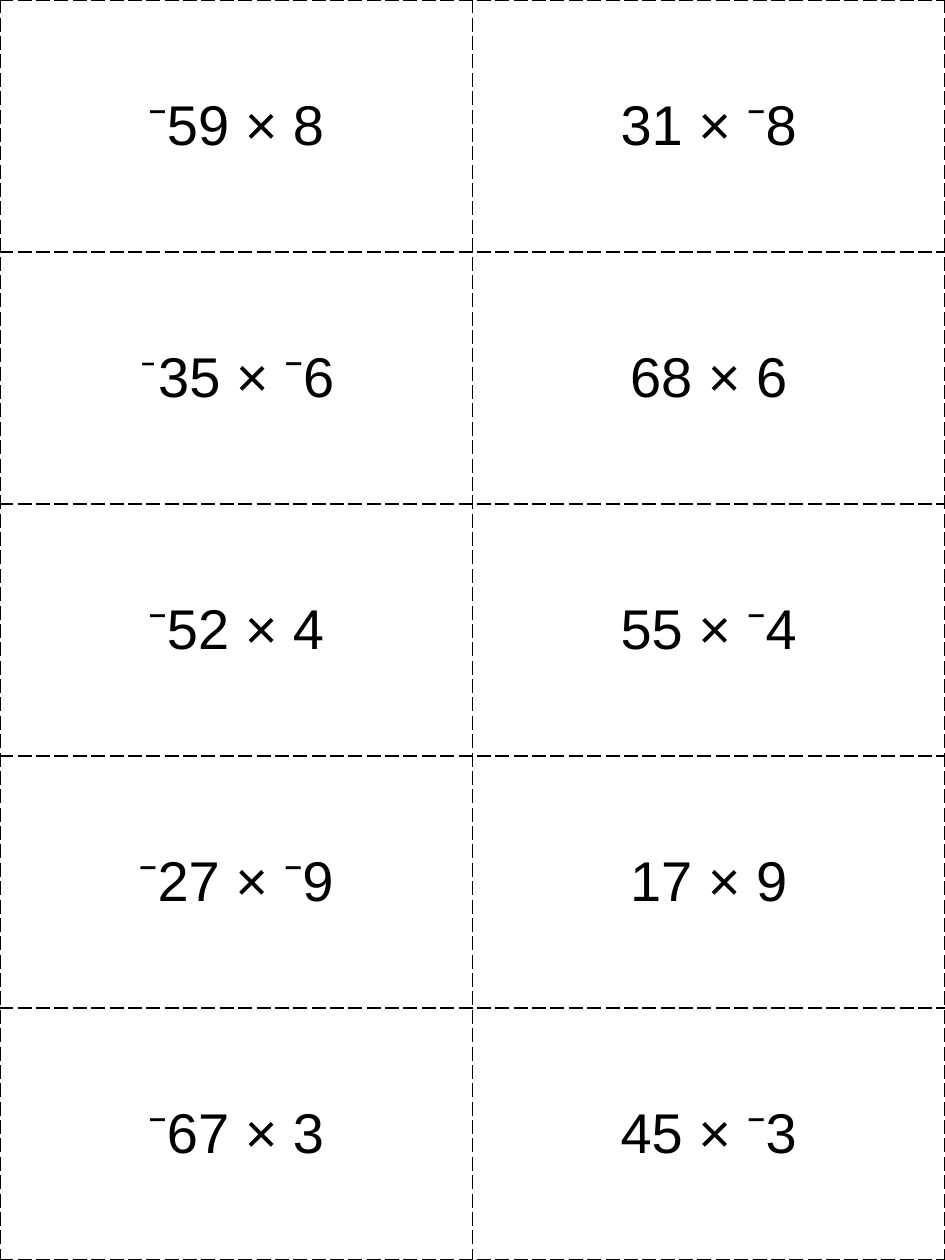
from lxml import etree
from pptx import Presentation
from pptx import util as u
from pptx.dml.color import RGBColor
from pptx.enum import text
from pptx.oxml.ns import qn

COLORS = {"ink": "000000"}
CARDS = [
    ["⁻59 × 8", "31 × ⁻8"],
    ["⁻35 × ⁻6", "68 × 6"],
    ["⁻52 × 4", "55 × ⁻4"],
    ["⁻27 × ⁻9", "17 × 9"],
    ["⁻67 × 3", "45 × ⁻3"],
]
CALIBRI_SIGN_CARD = (1, 0)  # this card's leading sign is in Calibri


def add_span(para, content, font):
    span = para.add_run()
    span.text = content
    span.font.name = font
    span.font.size = u.Pt(32)
    span.font.bold = False
    span.font.color.rgb = RGBColor.from_string(COLORS["ink"])


def add_dashed_borders(cell):
    properties = cell._tc.get_or_add_tcPr()
    for side in ("lnL", "lnR", "lnT", "lnB"):
        line = etree.SubElement(properties, qn(f"a:{side}"), w=str(u.Pt(1)))
        fill = etree.SubElement(line, qn("a:solidFill"))
        etree.SubElement(fill, qn("a:srgbClr"), val=COLORS["ink"])
        etree.SubElement(line, qn("a:prstDash"), val="lgDash")


# Page
deck = Presentation()
deck.slide_width = u.Cm(19.05)
deck.slide_height = u.Cm(25.4)
page = deck.slides.add_slide(deck.slide_layouts[6])

# Card grid filling the page
grid = page.shapes.add_table(
    len(CARDS), len(CARDS[0]), 0, 0, deck.slide_width, deck.slide_height
).table
grid.first_row = False
grid.horz_banding = False

# Cards
for row, questions in enumerate(CARDS):
    for column, question in enumerate(questions):
        cell = grid.cell(row, column)
        cell.vertical_anchor = text.MSO_ANCHOR.MIDDLE
        add_dashed_borders(cell)
        cell.fill.background()
        para = cell.text_frame.paragraphs[0]
        para.alignment = text.PP_ALIGN.CENTER
        if (row, column) == CALIBRI_SIGN_CARD:
            add_span(para, question[0], "Calibri")
            question = question[1:]
        add_span(para, question, "Arial")

deck.save("out.pptx")
